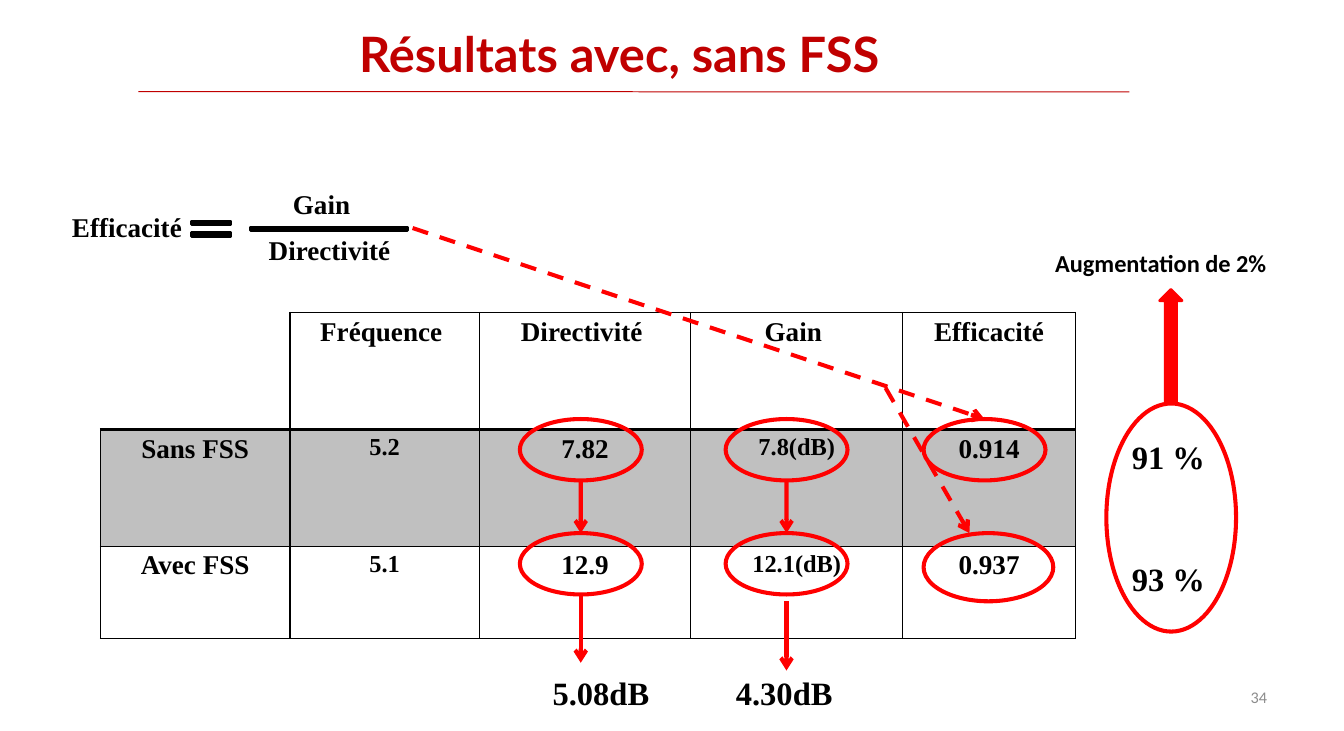
"""Build the slide comparing antenna results with and without FSS."""
from lxml.etree import SubElement
from pptx import Presentation
from pptx.dml.color import RGBColor
from pptx.enum.dml import MSO_LINE
from pptx.enum.shapes import MSO_CONNECTOR, MSO_SHAPE
from pptx.enum.text import MSO_ANCHOR, PP_ALIGN
from pptx.oxml.ns import qn
from pptx.util import Inches, Pt

COLORS = {"title": "C00000", "text": "000000", "accent": "FF0000", "band": "C0C0C0", "number": "8C8C8C"}
SERIF = "Times New Roman"
LEFT, CENTER, RIGHT = PP_ALIGN.LEFT, PP_ALIGN.CENTER, PP_ALIGN.RIGHT

presentation = Presentation()
presentation.slide_width = Inches(13.78)
presentation.slide_height = Inches(7.5)
slide = presentation.slides.add_slide(presentation.slide_layouts[6])


def share(*percents):
    """Turn alternating horizontal and vertical percentages into slide lengths."""
    sides = (presentation.slide_width, presentation.slide_height)
    return [round(sides[index % 2] * percent / 100) for index, percent in enumerate(percents)]


def write(frame, text, size, font, color, bold, align):
    """Write one formatted run in the first paragraph of a text frame."""
    paragraph = frame.paragraphs[0]
    paragraph.alignment = align
    run = paragraph.add_run()
    run.text = text
    run.font.size = Pt(size)
    run.font.name = font
    run.font.bold = bold
    run.font.color.rgb = RGBColor.from_string(COLORS[color])
    return paragraph


rows = [
    ["", "Fréquence ", "Directivité ", "Gain ", "Efficacité"],
    ["Sans FSS", "5.2", "7.82", "7.8(dB)", "0.914"],
    ["Avec FSS", "5.1", "12.9", "12.1(dB)", "0.937"],
]
table = slide.shapes.add_table(3, 5, *share(7.47, 42.73, 72.57, 44.67)).table
table.first_row = table.horz_banding = False
for column, width in zip(table.columns, [14.11, 14.08, 15.75, 15.75, 12.88]):
    column.width = share(width)[0]
for row, height in zip(table.rows, [16, 16, 12.67]):
    row.height = share(0, height)[1]
for row_index, texts in enumerate(rows):
    for column_index, text in enumerate(texts):
        cell = table.cell(row_index, column_index)
        cell.margin_left = cell.margin_right = Inches(0.07)
        cell.margin_top = cell.margin_bottom = 0
        if text:
            size = 18 if row_index and column_index in (1, 3) else 20
            paragraph = write(cell.text_frame, text, size, SERIF, "text", True, CENTER)
            paragraph.line_spacing = 1.15
        heavy_sides = {0: ["lnB"], 1: ["lnT"]}.get(row_index, [])
        for side in ("lnL", "lnR", "lnT", "lnB"):
            width = Pt(2.25 if side in heavy_sides else 1)
            border = SubElement(cell._tc.get_or_add_tcPr(), qn("a:" + side), w=str(width))
            if not text and side in ("lnL", "lnT"):
                SubElement(border, qn("a:noFill"))
            else:
                fill = SubElement(border, qn("a:solidFill"))
                SubElement(fill, qn("a:srgbClr"), val=COLORS["text"])
        if row_index == 1:
            cell.fill.solid()
            cell.fill.fore_color.rgb = RGBColor.from_string(COLORS["band"])
        else:
            cell.fill.background()

TOP_ROW, BOTTOM_ROW = 57.33, 72.93
shapes = {}
for name, kind, box, fill, line, width in [
    ("fraction bar", MSO_SHAPE.MATH_MINUS, (16.55, 30.23, 15.89, 2.13), "text", "text", 2),
    ("equal sign", MSO_SHAPE.MATH_EQUAL, (13.72, 30.23, 3.99, 2.13), "text", "text", 2),
    ("directivity without", MSO_SHAPE.OVAL, (38.68, TOP_ROW, 9.07, 8.4), None, "accent", 3),
    ("directivity with", MSO_SHAPE.OVAL, (38.68, BOTTOM_ROW, 9.07, 8.4), None, "accent", 3),
    ("gain without", MSO_SHAPE.OVAL, (53.99, TOP_ROW, 9.07, 8.4), None, "accent", 3),
    ("gain with", MSO_SHAPE.OVAL, (53.99, BOTTOM_ROW, 9.07, 8.4), None, "accent", 3),
    ("efficiency without", MSO_SHAPE.OVAL, (68.72, TOP_ROW, 9.07, 8.4), None, "accent", 3),
    ("efficiency with", MSO_SHAPE.OVAL, (68.72, BOTTOM_ROW, 9.65, 9.33), None, "accent", 3),
    ("percentages", MSO_SHAPE.OVAL, (82.32, 55.2, 9.65, 31.2), None, "accent", 3),
    ("increase", MSO_SHAPE.UP_ARROW, (86.28, 39.6, 1.67, 15.6), "accent", "accent", 2),
]:
    shape = slide.shapes.add_shape(kind, *share(*box))
    shape.shadow.inherit = False
    if fill:
        shape.fill.solid()
        shape.fill.fore_color.rgb = RGBColor.from_string(COLORS[fill])
    else:
        shape.fill.background()
    shape.line.color.rgb = RGBColor.from_string(COLORS[line])
    shape.line.width = Pt(width)
    shapes[name] = shape
shapes["equal sign"].adjustments[0] = 0.235
shapes["equal sign"].adjustments[1] = 0.53

for points, color, width, dashed, target in [
    ((10.3, 12.53, 84.03, 12.58), "title", 0.75, False, None),
    ((65.89, 53.07, 72.13, BOTTOM_ROW), "accent", 3, True, None),
    ((30.7, 31.2, 73.25, TOP_ROW), "accent", 3, True, "efficiency without"),
    ((43.21, 65.73, 43.21, BOTTOM_ROW), "accent", 3, False, "directivity with"),
    ((58.52, 65.73, 58.52, BOTTOM_ROW), "accent", 3, False, "gain with"),
    ((43.21, 81.2, 43.21, 90.67), "accent", 3, False, None),
    ((58.52, 82.27, 58.52, 91.73), "accent", 3, False, None),
]:
    connector = slide.shapes.add_connector(MSO_CONNECTOR.STRAIGHT, *share(*points))
    connector.line.color.rgb = RGBColor.from_string(COLORS[color])
    connector.line.width = Pt(width)
    if dashed:
        connector.line.dash_style = MSO_LINE.DASH
    if color == "accent":
        SubElement(connector.line._get_or_add_ln(), qn("a:tailEnd"), type="arrow")
    if target:
        connector.end_connect(shapes[target], 0)
    SubElement(connector._element.spPr, qn("a:effectLst"))

for text, box, size, font, color, bold, align in [
    ("Résultats avec, sans FSS", (18.94, 3.13, 54.28, 8.13), 36, "Lato", "title", True, CENTER),
    ("Efficacité", (4.64, 28.13, 9.72, 5.87), 20, SERIF, "text", True, LEFT),
    ("Gain", (21.08, 24.93, 6.24, 5.87), 20, SERIF, "text", True, LEFT),
    ("Directivité", (19.28, 31.28, 11.03, 5.87), 20, SERIF, "text", True, LEFT),
    ("5.08dB", (40.35, 90.67, 8.71, 7.07), 24, SERIF, "text", True, CENTER),
    ("4.30dB", (53.99, 90.67, 8.71, 7.07), 24, SERIF, "text", True, CENTER),
    ("91 %", (83.45, 58.33, 6.97, 7.07), 24, SERIF, "text", True, CENTER),
    ("93 %", (83.45, 75.07, 6.97, 7.07), 24, SERIF, "text", True, CENTER),
    ("Augmentation de 2%", (77.79, 33.33, 18.72, 5.33), 18, "Calibri", "text", True, LEFT),
    ("34", (71.63, 92.67, 23.37, 5.33), 12, "Calibri", "number", False, RIGHT),
]:
    frame = slide.shapes.add_textbox(*share(*box)).text_frame
    frame.word_wrap = size in (12, 36)
    frame.vertical_anchor = MSO_ANCHOR.MIDDLE if frame.word_wrap else MSO_ANCHOR.TOP
    paragraph = write(frame, text, size, font, color, bold, align)
    if size == 24:
        paragraph.line_spacing = 1.15
        paragraph.space_before = Pt(12)
        paragraph.space_after = Pt(3)

presentation.save("out.pptx")
